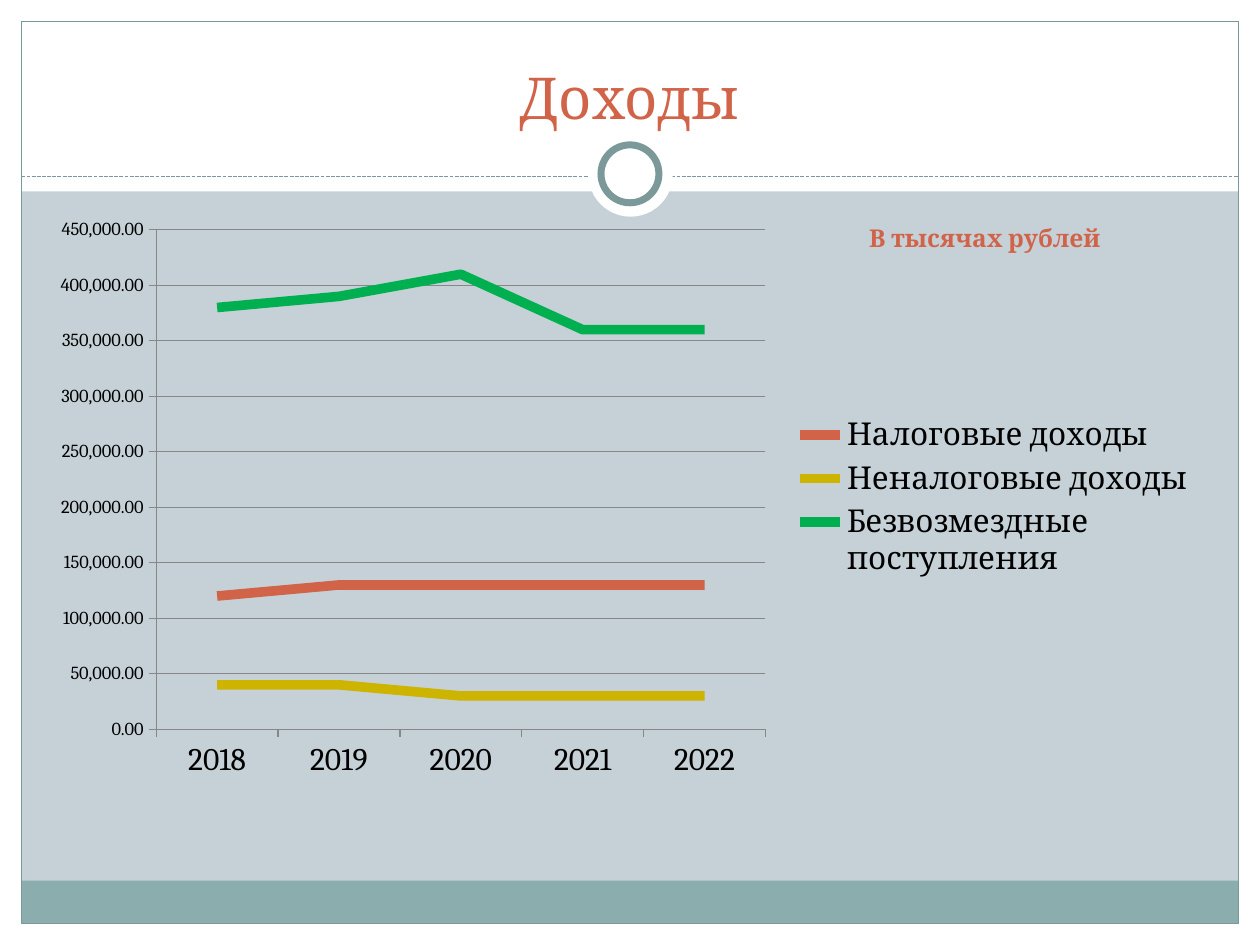
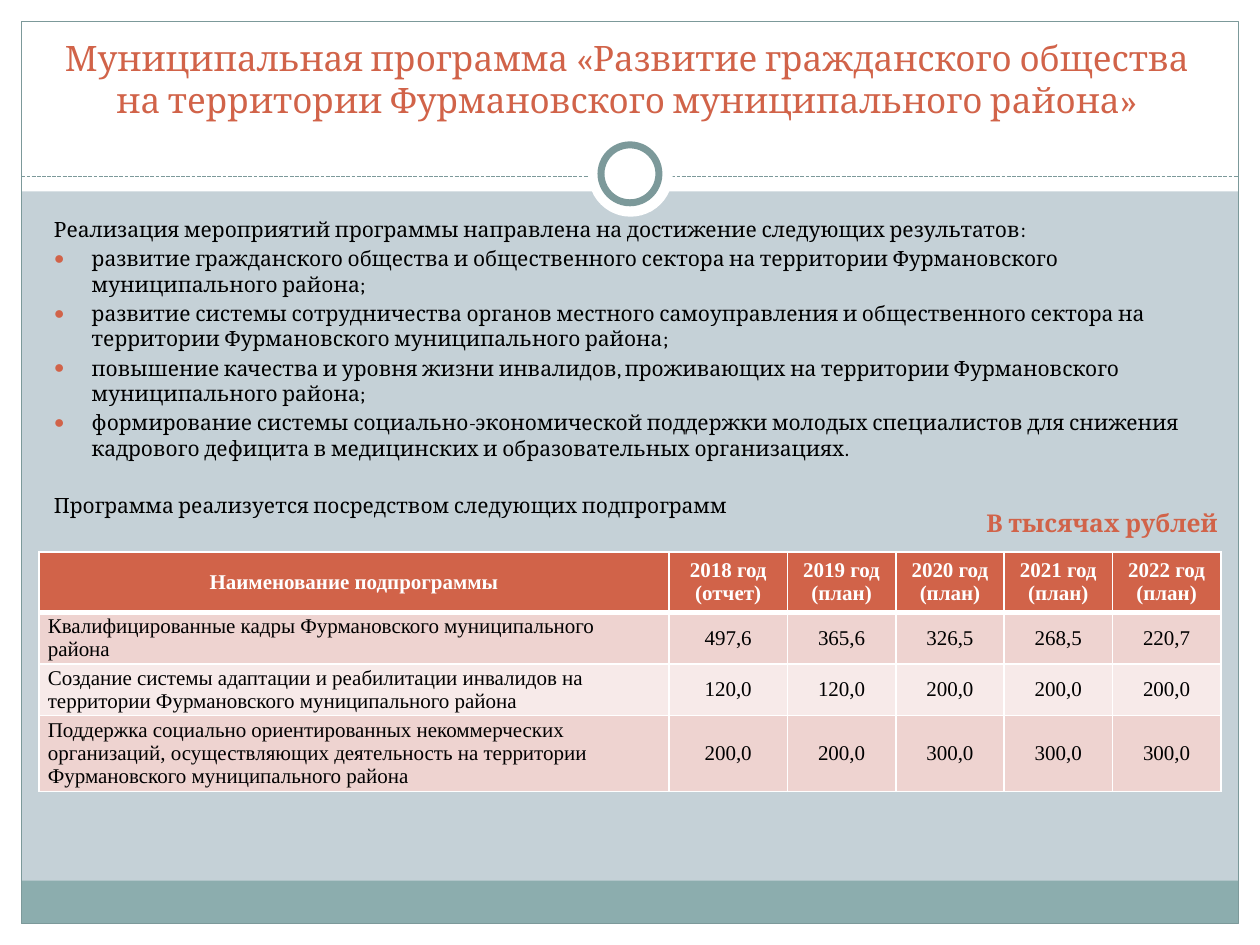
from lxml import etree
from pptx import Presentation
from pptx.chart.data import CategoryChartData
from pptx.dml.color import RGBColor
from pptx.enum.chart import XL_CHART_TYPE, XL_LEGEND_POSITION, XL_MARKER_STYLE, XL_TICK_MARK
from pptx.enum.dml import MSO_LINE
from pptx.enum.shapes import MSO_CONNECTOR, MSO_SHAPE
from pptx.enum.text import MSO_ANCHOR, MSO_AUTO_SIZE, PP_ALIGN
from pptx.oxml.ns import qn
from pptx.util import Inches, Pt

RECT, OVAL = MSO_SHAPE.RECTANGLE, MSO_SHAPE.OVAL
LEFT, MID = PP_ALIGN.LEFT, PP_ALIGN.CENTER
OUT, PLAIN = XL_TICK_MARK.OUTSIDE, XL_MARKER_STYLE.NONE

PALE = RGBColor(0xC5, 0xD1, 0xD7)
WHITE = RGBColor(0xFF, 0xFF, 0xFF)
BLACK = RGBColor(0, 0, 0)
TEAL = RGBColor(0x8C, 0xAD, 0xAE)
SLATE = RGBColor(0x7C, 0x99, 0x9A)
RUST = RGBColor(0xD1, 0x63, 0x49)
GOLD = RGBColor(0xCC, 0xB4, 0x00)
GREEN = RGBColor(0x00, 0xB0, 0x50)
GREY = RGBColor(0x87, 0x87, 0x87)
ROSE = RGBColor(0xEE, 0xD3, 0xD0)
BLUSH = RGBColor(0xF7, 0xEA, 0xE9)
SERIF, TIMES = "Cambria", "Times New Roman"

WIDE, HIGH, EDGE = 10, 7.5, 0.17
SPAN = WIDE - 2 * EDGE
RULE = 1.4
UNIT = "В тысячах рублей"


def write(para, text, size, color, font=SERIF, bold=False, align=LEFT):
    para.alignment = align
    run = para.add_run()
    run.text = text
    run.font.size, run.font.name, run.font.bold = Pt(size), font, bold
    run.font.color.rgb = color


def place(slide, x, y, w, h):
    """Add a wrapping text box and return its text frame."""
    frame = slide.shapes.add_textbox(Inches(x), Inches(y), Inches(w), Inches(h)).text_frame
    frame.word_wrap = True
    return frame


prs = Presentation()
prs.slide_width, prs.slide_height = Inches(WIDE), Inches(HIGH)
back = prs.slide_master.background.fill
back.solid()
back.fore_color.rgb = PALE

# Shared frame: kind, x, y, w, h, fill, line width
FRAME = [
    (RECT, 0, HIGH - EDGE, WIDE, EDGE, WHITE, 0),
    (RECT, 0, 0, WIDE, 1.52, WHITE, 0),
    (RECT, 0, 0, EDGE, HIGH, WHITE, 0),
    (RECT, WIDE - EDGE, 0, EDGE, HIGH, WHITE, 0),
    (RECT, EDGE, 6.99, SPAN, 0.34, TEAL, 0),
    (RECT, EDGE, EDGE, SPAN, HIGH - 2 * EDGE, None, 0.75),
    (OVAL, 4.67, 1.05, 0.67, 0.67, WHITE, 0),
    (OVAL, 4.77, 1.15, 0.46, 0.46, WHITE, 4),
]
TITLES = [
    ("Доходы", 33, 0.33, 0.25, 0.83),
    ("Муниципальная программа «Развитие гражданского общества "
     "на территории Фурмановского муниципального района»", 20, 0.31, 0.47, 0.53),
]

slides = []
for text, size, x, y, h in TITLES:
    slide = prs.slides.add_slide(prs.slide_layouts[5])
    slides.append(slide)
    for kind, left, top, wide, high, fill, line in FRAME:
        if kind == OVAL and line == 0:
            rule = slide.shapes.add_connector(
                MSO_CONNECTOR.STRAIGHT, Inches(EDGE), Inches(RULE),
                Inches(WIDE - EDGE), Inches(RULE))
            rule.line.color.rgb, rule.line.width = SLATE, Pt(0.75)
            rule.line.dash_style = MSO_LINE.SQUARE_DOT
            etree.SubElement(rule.element.spPr, qn("a:effectLst"))
        part = slide.shapes.add_shape(
            kind, Inches(left), Inches(top), Inches(wide), Inches(high))
        part.shadow.inherit = False
        if fill is None:
            part.fill.background()
        else:
            part.fill.solid()
            part.fill.fore_color.rgb = fill
        if line:
            part.line.color.rgb, part.line.width = SLATE, Pt(line)
        else:
            part.line.fill.background()

    title = slide.shapes.title
    title.left, title.top = Inches(x), Inches(y)
    title.width, title.height = Inches(9.33), Inches(h)
    title.element.getparent().append(title.element)  # bring above the bands
    frame = title.text_frame
    frame.auto_size, frame.word_wrap = MSO_AUTO_SIZE.NONE, True
    frame.vertical_anchor, frame.margin_bottom = MSO_ANCHOR.BOTTOM, Inches(0.04)
    write(frame.paragraphs[0], text, size, RUST, align=MID)

# Slide 1: income chart
income, program = slides
SERIES = [
    ("Налоговые доходы", RUST, (120000, 130000, 130000, 130000, 130000)),
    ("Неналоговые доходы", GOLD, (40000, 40000, 30000, 30000, 30000)),
    ("Безвозмездные поступления", GREEN, (380000, 390000, 410000, 360000, 360000)),
]
data = CategoryChartData()
data.categories = [str(year) for year in range(2018, 2023)]
for name, _, vals in SERIES:
    data.add_series(name, vals)
chart = income.shapes.add_chart(
    XL_CHART_TYPE.LINE, Inches(0.31), Inches(1.64), Inches(9.3), Inches(4.61), data).chart
chart.has_title = False
chart.font.size, chart.font.name, chart.font.color.rgb = Pt(18), SERIF, BLACK
plot = chart.plots[0]
plot.vary_by_categories = False
for line, (_, color, _) in zip(plot.series, SERIES):
    line.smooth = False
    line.format.line.color.rgb, line.format.line.width = color, Pt(5.5)
    line.marker.style = PLAIN

axis = chart.value_axis
axis.minimum_scale, axis.maximum_scale, axis.major_unit = 0, 450000, 50000
axis.tick_labels.number_format = "#,##0.00"
axis.tick_labels.number_format_is_linked = False
axis.tick_labels.font.size = Pt(10.5)
axis.has_major_gridlines = True
for item in (axis, chart.category_axis):
    item.major_tick_mark = OUT
    item.format.line.color.rgb = GREY
axis.major_gridlines.format.line.color.rgb = GREY

chart.has_legend = True
legend = chart.legend
legend.position, legend.include_in_layout = XL_LEGEND_POSITION.RIGHT, False
area = chart.element.find(".//" + qn("c:plotArea"))
key = chart.element.find(".//" + qn("c:legend"))
for host, spot, inner, shares in (
        (area, 0, True, (0.1, 0.04, 0.52, 0.86)),
        (key, 1, False, (0.64, 0.35, 0.35, 0.3))):
    for old in host.findall(qn("c:layout")):
        host.remove(old)
    layout = etree.Element(qn("c:layout"))
    host.insert(spot, layout)
    manual = etree.SubElement(layout, qn("c:manualLayout"))
    if inner:
        etree.SubElement(manual, qn("c:layoutTarget"), val="inner")
    for tag in ("xMode", "yMode"):
        etree.SubElement(manual, qn("c:" + tag), val="edge")
    for tag, share in zip("xywh", shares):
        etree.SubElement(manual, qn("c:" + tag), val=str(share))

# Slide 2: goals and subprogram table
GOALS = [
    "развитие гражданского общества и общественного сектора на территории "
    "Фурмановского муниципального района;",
    "развитие системы сотрудничества органов местного самоуправления и "
    "общественного сектора на территории Фурмановского муниципального района;",
    "повышение качества и уровня жизни инвалидов, проживающих на территории "
    "Фурмановского муниципального района;",
    "формирование системы социально-экономической поддержки молодых специалистов "
    "для снижения кадрового дефицита в медицинских и образовательных организациях.",
]
LEAD = "Реализация мероприятий программы направлена на достижение следующих результатов:"
TAIL = "Программа реализуется посредством следующих подпрограмм"
frame = place(program, 0.33, 1.67, 9.3, 2.6)
for i, text in enumerate([LEAD, *GOALS, TAIL]):
    para = frame.add_paragraph() if i else frame.paragraphs[0]
    para.space_before = Pt(18.5 if text == TAIL else 2.4)
    write(para, text, 12, BLACK)
    if text in GOALS:
        props = para._p.get_or_add_pPr()
        props.set("marL", str(Inches(0.3)))
        props.set("indent", str(-Inches(0.3)))
        tint = etree.SubElement(props, qn("a:buClr"))
        etree.SubElement(tint, qn("a:srgbClr"), val=str(RUST))
        etree.SubElement(props, qn("a:buSzPct"), val="85000")
        etree.SubElement(props, qn("a:buFont"), typeface=TIMES)
        etree.SubElement(props, qn("a:buChar"), char="●")

ROWS = [
    ["Наименование подпрограммы", "2018 год\n(отчет)"]
    + [f"{year} год\n(план)" for year in range(2019, 2023)],
    ["Квалифицированные кадры Фурмановского муниципального района",
     "497,6", "365,6", "326,5", "268,5", "220,7"],
    ["Создание системы адаптации и реабилитации инвалидов на территории "
     "Фурмановского муниципального района",
     "120,0", "120,0", "200,0", "200,0", "200,0"],
    ["Поддержка социально ориентированных некоммерческих организаций, осуществляющих "
     "деятельность на территории Фурмановского муниципального района",
     "200,0", "200,0", "300,0", "300,0", "300,0"],
]
COLS = [5, 0.94] + [0.86] * 4
TALL = [0.48] + [0.41] * 3
FILLS = [RUST, ROSE, BLUSH, ROSE]
table = program.shapes.add_table(
    len(ROWS), len(COLS), Inches(0.31), Inches(4.38),
    Inches(sum(COLS)), Inches(sum(TALL))).table
for col, wide in zip(table.columns, COLS):
    col.width = Inches(wide)
for r, row in enumerate(ROWS):
    table.rows[r].height = Inches(TALL[r])
    head = r == 0
    for c, text in enumerate(row):
        cell = table.cell(r, c)
        cell.fill.solid()
        cell.fill.fore_color.rgb = FILLS[r]
        cell.vertical_anchor = MSO_ANCHOR.MIDDLE
        cell.margin_left = cell.margin_right = Inches(0.07)
        cell.margin_top = cell.margin_bottom = 0
        for i, part in enumerate(text.split("\n")):
            para = cell.text_frame.add_paragraph() if i else cell.text_frame.paragraphs[0]
            write(para, part, 12, WHITE if head else BLACK, TIMES, head,
                  MID if head or c else LEFT)
        props = cell._tc.get_or_add_tcPr()
        for i, side in enumerate("LRTB"):
            thick = (head and side == "B") or (r == 1 and side == "T")
            edge = etree.Element(qn("a:ln" + side), w=str(Pt(3 if thick else 1)))
            paint = etree.SubElement(edge, qn("a:solidFill"))
            etree.SubElement(paint, qn("a:srgbClr"), val=str(WHITE))
            props.insert(i, edge)

for slide, x, y in ((income, 6.8, 1.72), (program, 7.73, 3.98)):
    write(place(slide, x, y, 2.27, 0.4).paragraphs[0], UNIT, 14, RUST, bold=True)

prs.save("out.pptx")
